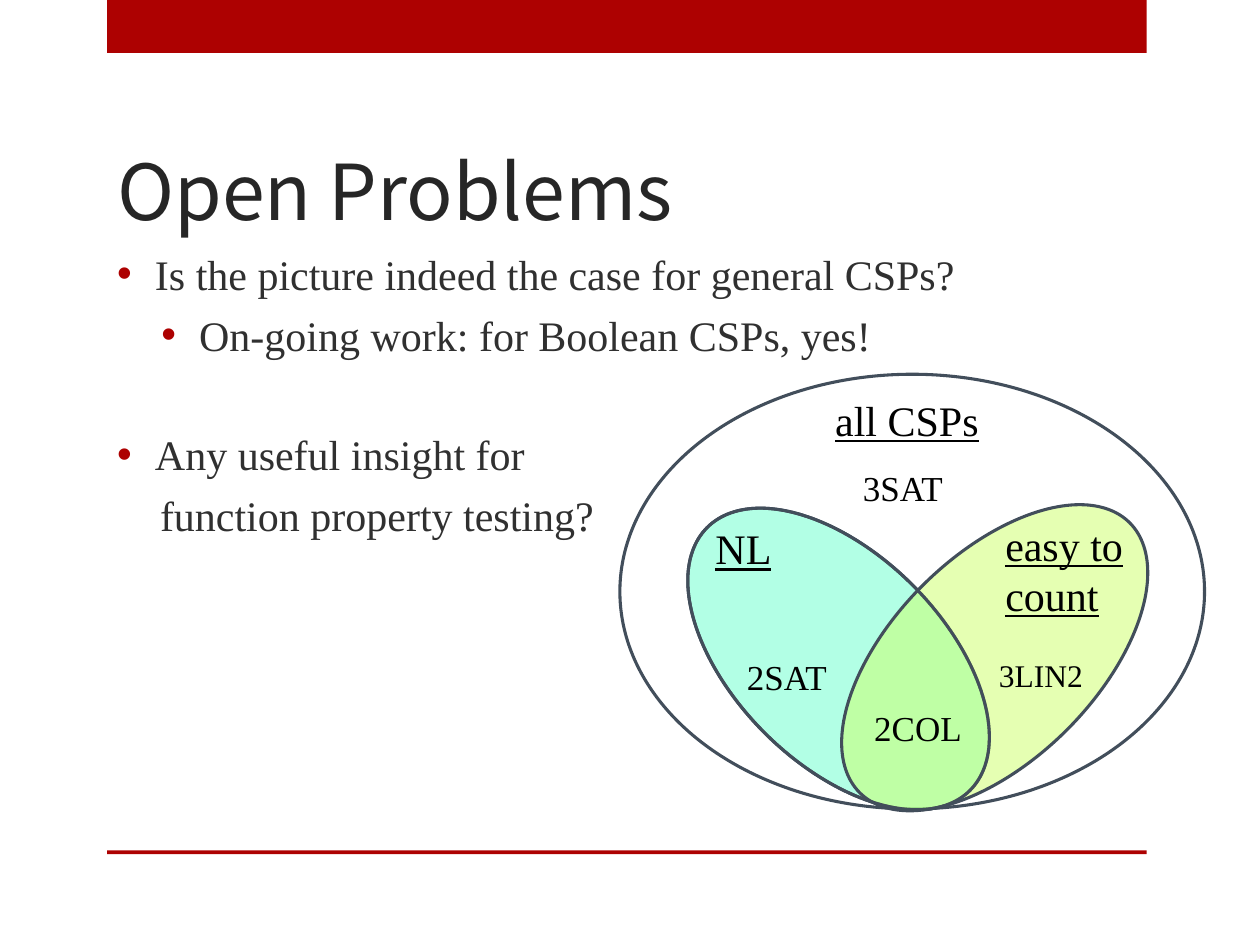
"""Build the Open Problems slide with a Venn diagram of CSP classes."""
from lxml.etree import SubElement
from pptx import Presentation
from pptx.dml.color import RGBColor
from pptx.enum.shapes import MSO_SHAPE as SHAPE
from pptx.enum.text import MSO_ANCHOR as ANCHOR, MSO_AUTO_SIZE as AUTO_SIZE, PP_ALIGN as ALIGN
from pptx.oxml.ns import qn
from pptx.util import Inches, Pt

COLORS = {"red": "AD0101", "title": "262626", "body": "303030", "outline": "424E5B",
          "label": "000000", "nl": "66FFCC", "easy": "CCFF66"}
SERIF = "Times New Roman"


def style(paragraph, font, size, color, underline=None):
    for run in paragraph.runs:
        run.font.name = font
        run.font.size = Pt(size)
        run.font.color.rgb = RGBColor.from_string(COLORS[color])
        run.font.underline = underline


def add_filled(kind, box, fill=None, alpha=100):
    shape = slide.shapes.add_shape(kind, *map(Inches, box))
    shape.shadow.inherit = False
    if fill:
        shape.fill.solid()
        shape.fill.fore_color.rgb = RGBColor.from_string(COLORS[fill])
        if alpha < 100:
            color = shape.fill._xPr.find(qn("a:solidFill"))[0]
            SubElement(color, qn("a:alpha"), val=str(alpha * 1000))
    else:
        shape.fill.background()
    return shape


prs = Presentation()
prs.slide_width, prs.slide_height = Inches(10), Inches(7.5)
slide = prs.slides.add_slide(prs.slide_layouts[1])

for top, height in ((0, 0.42), (6.75, 0.03)):
    band = add_filled(SHAPE.RECTANGLE, (0.85, top, 8.25, height), "red")
    band.line.fill.background()

title = slide.shapes.title
title.left, title.top, title.width, title.height = map(Inches, (0.83, 0.75, 8.25, 1.17))
title.text_frame.text = "Open Problems"
title.text_frame.vertical_anchor = ANCHOR.BOTTOM
title.text_frame.auto_size = AUTO_SIZE.NONE
title.text_frame.paragraphs[0].alignment = ALIGN.LEFT
style(title.text_frame.paragraphs[0], "Noto Sans CJK JP", 44, "title")

questions = slide.placeholders[1]
questions.left, questions.top, questions.width, questions.height = map(
    Inches, (0.83, 1.92, 8.25, 4.83))
questions.text_frame.auto_size = AUTO_SIZE.NONE
QUESTION_LINES = [
    ("Is the picture indeed the case for general CSPs?", 0, 0.3, 6, True),
    ("On-going work: for Boolean CSPs, yes!", 1, 0.65, 6, True),
    ("Any useful insight for", 0, 0.3, 39.5, True),
    ("function property testing?", 0, 0.34, 6, False),
]
questions.text_frame.text = "\n".join(line[0] for line in QUESTION_LINES)
for paragraph, (_, level, indent, gap, bullet) in zip(
        questions.text_frame.paragraphs, QUESTION_LINES):
    paragraph.level = level
    paragraph.space_before = Pt(gap)
    style(paragraph, SERIF, 24, "body")
    props = paragraph._p.get_or_add_pPr()
    props.set("marL", str(Inches(indent)))
    props.set("indent", str(Inches(-0.3 if bullet else 0)))
    if bullet:
        bullet_color = SubElement(props, qn("a:buClr"))
        SubElement(bullet_color, qn("a:srgbClr"), val=COLORS["red"])
        SubElement(props, qn("a:buFont"), typeface="Arial")
        SubElement(props, qn("a:buChar"), char="•")
    else:
        SubElement(props, qn("a:buNone"))

NL_BOX = (5.18, 4.4, 2.95, 1.66)
CLASSES = [
    ((4.92, 2.97, 4.64, 3.45), 0, None),
    (NL_BOX, 45, "nl"),
    ((6.38, 4.41, 3.03, 1.62), 315, "easy"),
    (NL_BOX, 45, None),
]
for box, rotation, fill in CLASSES:
    csp_class = add_filled(SHAPE.OVAL, box, fill, 50)
    csp_class.rotation = rotation
    csp_class.line.color.rgb = RGBColor.from_string(COLORS["outline"])
    csp_class.line.width = Pt(1.75)

LABELS = [
    ("easy to\ncount", (7.88, 4.07, 1.15, 0.91), 24, True),
    ("NL", (5.58, 4.1, 0.66, 0.5), 24, True),
    ("all CSPs", (6.53, 3.08, 1.35, 0.5), 24, True),
    ("2SAT", (5.83, 5.15, 0.84, 0.44), 20, None),
    ("2COL", (6.84, 5.56, 0.9, 0.44), 20, None),
    ("3SAT", (6.75, 3.65, 0.84, 0.44), 20, None),
    ("3LIN2", (7.83, 5.16, 0.87, 0.4), 18, None),
]
for text, box, size, underline in LABELS:
    label = slide.shapes.add_textbox(*map(Inches, box))
    label.text_frame.word_wrap = False
    label.text_frame.auto_size = AUTO_SIZE.SHAPE_TO_FIT_TEXT
    label.text_frame.text = text
    for paragraph in label.text_frame.paragraphs:
        style(paragraph, SERIF, size, "label", underline)

prs.save("out.pptx")
